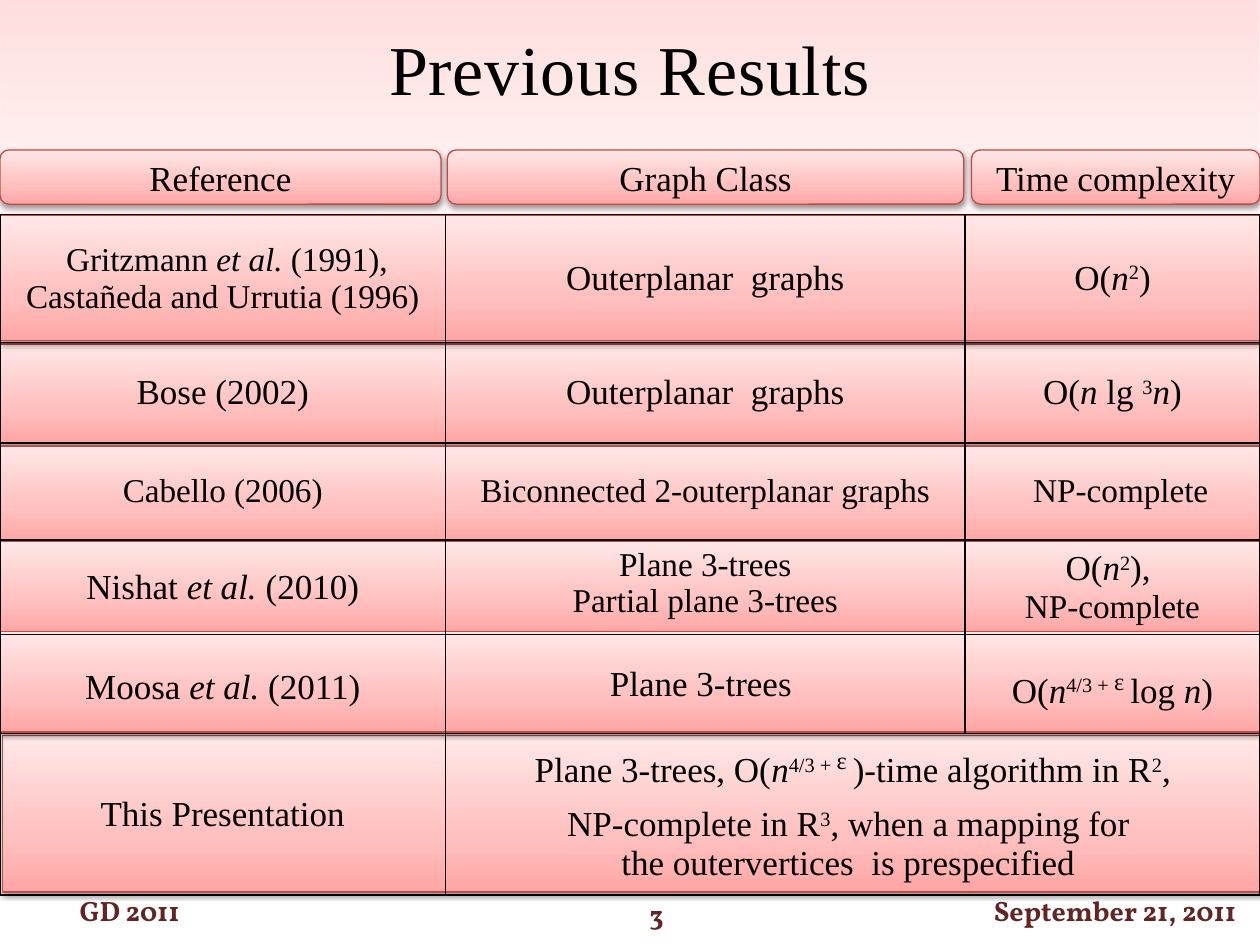
"""Build the "Previous Results" slide: a table of graph classes and time complexities."""
from dataclasses import dataclass

from lxml.etree import SubElement
from pptx import Presentation
from pptx.dml.color import RGBColor
from pptx.enum.shapes import MSO_SHAPE as Shape
from pptx.enum.text import MSO_ANCHOR as Anchor, PP_ALIGN as Align
from pptx.oxml import parse_xml
from pptx.oxml.ns import nsdecls, qn
from pptx.util import Pt


@dataclass(frozen=True)
class Theme:
    serif: str = "Times New Roman"
    footer_font: str = "Vollkorn"
    ink: str = "000000"
    footer_ink: str = "632523"
    edge: str = "BF4C48"
    panel: tuple = ((0, "FFA6A5", 100), (35, "FFC0BF", 100), (100, "FFE7E7", 100))
    glow: tuple = ((0, "FF0000", 0), (45, "FF0000", 0), (70, "FF0300", 0), (100, "FF0000", 13))
    title: int = 40
    epsilon: int = 24
    body: int = 20
    small: int = 19
    footer: int = 16


theme = Theme()


def write(paragraph, text, size=theme.body, font=theme.serif, color=theme.ink, bold=False, spacing=0):
    """Add text whose parts are split by "|": _ is italic, ^ raised, ~ raised and large."""
    paragraph.alignment = Align.CENTER
    for part in text.split("|"):
        mark = part[0] if part[0] in "_^~" else ""
        run = paragraph.add_run()
        run.text = part[len(mark):]
        run.font.name = font
        run.font.size = Pt(theme.epsilon if mark == "~" else size)
        run.font.bold = bold
        run.font.italic = mark == "_"
        run.font.color.rgb = RGBColor.from_string(color)
        properties = run.font._element
        if mark in ("^", "~"):
            properties.set("baseline", "30000")
        if spacing:
            properties.set("spc", str(int(spacing * 100)))


def add_panel(kind, left, top, width, height, stops=theme.panel, framed=True):
    """Add a shape with a vertical gradient and, when framed, an edge and a soft shadow."""
    shape = slide.shapes.add_shape(kind, Pt(left), Pt(top), Pt(width), Pt(height))
    shape.shadow.inherit = False
    shape.fill.gradient()
    shape.fill.gradient_angle = 90
    stop_list = shape.element.spPr.find(".//" + qn("a:gsLst"))
    stop_list.clear()
    for position, color, opacity in stops:
        stop = SubElement(stop_list, qn("a:gs"), pos=str(position * 1000))
        tint = SubElement(stop, qn("a:srgbClr"), val=color)
        SubElement(tint, qn("a:alpha"), val=str(opacity * 1000))
    if not framed:
        shape.line.fill.background()
        return shape
    shape.line.color.rgb = RGBColor.from_string(theme.edge)
    shape.line.width = Pt(0.75)
    shape.element.spPr.find(qn("a:effectLst")).append(parse_xml(
        f'<a:outerShdw {nsdecls("a")} blurRad="40000" dist="20000" dir="5400000" rotWithShape="0">'
        f'<a:srgbClr val="{theme.ink}"><a:alpha val="38000"/></a:srgbClr></a:outerShdw>'))
    return shape


presentation = Presentation()
presentation.slide_width, presentation.slide_height = Pt(720), Pt(540)
slide = presentation.slides.add_slide(presentation.slide_layouts[6])

add_panel(Shape.RECTANGLE, 0, 0, 720, 504.7, stops=theme.glow, framed=False)

title_box = slide.shapes.add_textbox(Pt(0), Pt(10.8), Pt(720), Pt(55.4))
title_box.text_frame.word_wrap = True
write(title_box.text_frame.paragraphs[0], "Previous Results", size=theme.title, spacing=0.5)

row_panels = [(1.44, 420.5, 89.3), (0, 196.6, 56.2), (0, 254.9, 54.7),
              (0, 309.6, 51.8), (0, 360.7, 57.6), (0, 123.1, 71.3)]
for left, top, height in row_panels:
    add_panel(Shape.RECTANGLE, left, top, 720, height)

body, small = theme.body, theme.small
rows = [
    [[(" Gritzmann |_et al. |(1991),", small), ("Castañeda and Urrutia (1996)", small)],
     [("Outerplanar  graphs", body)],
     [("O(|_n|^2|)", body)]],
    [[("Bose (2002)", body)],
     [("Outerplanar  graphs", body)],
     [("O(|_n |lg |^3|_n|)", body)]],
    [[("Cabello (2006)", small)],
     [("Biconnected 2-outerplanar graphs", small)],
     [("NP-complete", small)]],
    [[("Nishat |_et al. |(2010)", body)],
     [("Plane 3-trees", small), ("Partial plane 3-trees", small)],
     [("O(|_n|^2|), ", body), ("NP-complete", small)]],
    [[("Moosa|_ et al. |(2011)", body)],
     [("Plane 3-trees ", body)],
     [("O(|_n|^4/3 + |~ɛ |log |_n|)", body)]],
    [[("This Presentation", body)],
     [("Plane 3-trees, O(|_n|^4/3 + |~ɛ |)-time algorithm in R|^2|,", body),
      ("NP-complete in R|^3|, when a mapping for ", body),
      ("the outervertices  is prespecified ", body)]],
]
column_widths = [254.6, 296.9, 168.5]
row_heights = [73.1, 57.6, 55.4, 50.4, 56.5, 92.2]
table_frame = slide.shapes.add_table(len(rows), len(column_widths), Pt(0), Pt(122.6),
                                     Pt(720), Pt(sum(row_heights)))
table = table_frame.table
table.first_row = table.horz_banding = False
for column, width in zip(table.columns, column_widths):
    column.width = Pt(width)
for table_row, height in zip(table.rows, row_heights):
    table_row.height = Pt(height)
for cell in table.iter_cells():
    cell.fill.background()
    cell.vertical_anchor = Anchor.MIDDLE
    for index, side in enumerate("LRTB"):
        cell._tc.get_or_add_tcPr().insert(index, parse_xml(
            f'<a:ln{side} {nsdecls("a")} w="12700"><a:solidFill>'
            f'<a:srgbClr val="{theme.ink}"/></a:solidFill></a:ln{side}>'))
table.cell(5, 1).merge(table.cell(5, 2))
for row_index, row in enumerate(rows):
    for column_index, lines in enumerate(row):
        frame = table.cell(row_index, column_index).text_frame
        for line_index, (text, size) in enumerate(lines):
            paragraph = frame.add_paragraph() if line_index else frame.paragraphs[0]
            write(paragraph, text, size=size)
table.cell(2, 2).margin_left = Pt(16.7)
table.cell(3, 1).vertical_anchor = Anchor.TOP
table.cell(4, 0).margin_top = Pt(8)
table.cell(4, 2).margin_top = Pt(9)
table.cell(5, 1).text_frame.paragraphs[1].space_before = Pt(8)

for text, left, width in [("Reference", 0, 252), ("Graph Class", 255.6, 295.2),
                          ("Time complexity", 555.1, 164.9)]:
    header = add_panel(Shape.ROUNDED_RECTANGLE, left, 85.7, width, 31)
    header.text_frame.vertical_anchor = Anchor.MIDDLE
    write(header.text_frame.paragraphs[0], text)

for text, left, top, width in [("GD 2011", 0, 507.6, 148.3),
                               ("September 21, 2011", 554.4, 507.6, 165.6),
                               ("3", 301, 509.8, 148.3)]:
    footer = slide.shapes.add_shape(Shape.ROUNDED_RECTANGLE, Pt(left), Pt(top), Pt(width), Pt(25.2))
    footer.shadow.inherit = False
    footer.fill.background()
    footer.line.fill.background()
    footer.text_frame.vertical_anchor = Anchor.MIDDLE
    write(footer.text_frame.paragraphs[0], text, size=theme.footer, font=theme.footer_font,
          color=theme.footer_ink, bold=True)

presentation.save("out.pptx")
